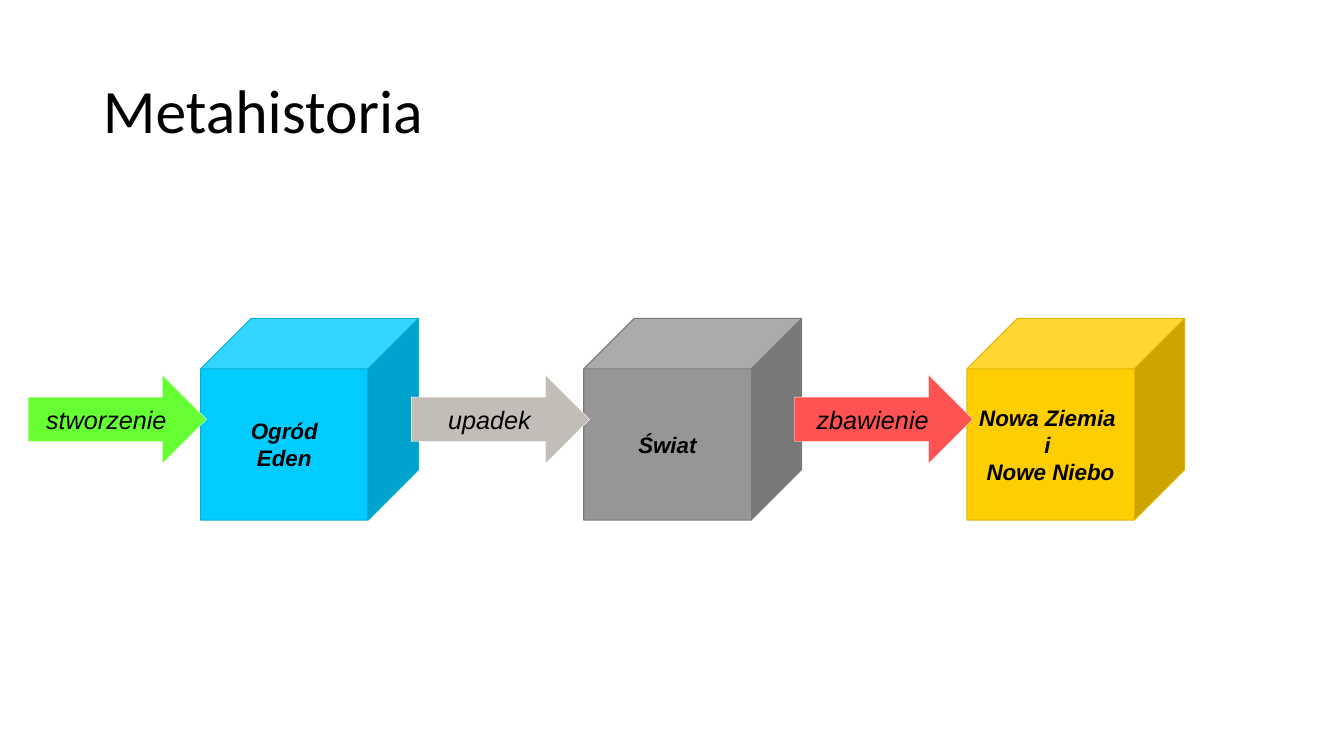
from pptx import Presentation
from pptx.dml.color import RGBColor
from pptx.enum.shapes import MSO_SHAPE
from pptx.enum.text import MSO_ANCHOR, PP_ALIGN
from pptx.util import Inches, Pt

CUBE, ARROW = MSO_SHAPE.CUBE, MSO_SHAPE.RIGHT_ARROW
MIDDLE = MSO_ANCHOR.MIDDLE
LEFT, CENTER = PP_ALIGN.LEFT, PP_ALIGN.CENTER

BLACK = RGBColor(0x00, 0x00, 0x00)
WHITE = RGBColor(0xFF, 0xFF, 0xFF)
GREEN = RGBColor(0x66, 0xFF, 0x33)
BEIGE = RGBColor(0xC2, 0xBD, 0xB6)
RED = RGBColor(0xFF, 0x53, 0x53)
BLUE = RGBColor(0x00, 0xCC, 0xFF)
BLUE_EDGE = RGBColor(0x00, 0xAE, 0xD8)
GREY = RGBColor(0x96, 0x96, 0x96)
GREY_EDGE = RGBColor(0x7A, 0x7A, 0x7A)
GOLD = RGBColor(0xFF, 0xCE, 0x00)
GOLD_EDGE = RGBColor(0xE0, 0xB4, 0x00)

# Content: each stage is an event (arrow) leading to a state (cube)
TITLE = "Metahistoria"
STAGES = [
    ("stworzenie", GREEN, "Ogród\vEden", BLUE, BLUE_EDGE),
    ("upadek", BEIGE, "Świat", GREY, GREY_EDGE),
    ("zbawienie", RED, "Nowa Ziemia \ni \nNowe Niebo", GOLD, GOLD_EDGE),
]

# Grid, in inches: one column per stage, all parts centred on one axis
FIRST_LEFT, COLUMN, AXIS = 0.28, 3.8, 4.16
ARROW_WIDTH, ARROW_HEIGHT = 1.77, 0.88
CUBE_OFFSET, CUBE_WIDTH, CUBE_HEIGHT = 1.71, 2.16, 2.0


def add_part(slide, kind, left, width, height, text, fill, edge, edge_width, size, bold):
    part = slide.shapes.add_shape(
        kind, Inches(left), Inches(AXIS - height / 2), Inches(width), Inches(height))
    part.shadow.inherit = False
    part.fill.solid()
    part.fill.fore_color.rgb = fill
    part.line.color.rgb = edge
    part.line.width = Pt(edge_width)
    frame = part.text_frame
    frame.word_wrap = False
    frame.vertical_anchor = MIDDLE
    frame.text = text
    for para in frame.paragraphs:
        para.alignment = CENTER
        font = para.font
        font.name, font.size = "Arial", Pt(size)
        font.bold, font.italic = bold, True
        font.color.rgb = BLACK


def main():
    deck = Presentation()
    deck.slide_width, deck.slide_height = Inches(13.33), Inches(7.5)
    slide = deck.slides.add_slide(deck.slide_layouts[5])

    # Title
    title = slide.shapes.title
    title.left, title.top = Inches(0.92), Inches(0.4)
    title.width, title.height = Inches(11.5), Inches(1.45)
    title.text_frame.text = TITLE
    title.text_frame.vertical_anchor = MIDDLE
    para = title.text_frame.paragraphs[0]
    para.alignment, para.line_spacing = LEFT, 0.9
    para.font.name, para.font.size = "Calibri", Pt(44)
    para.font.color.rgb = BLACK

    # Cubes first, so that the arrows lie over them
    lefts = [FIRST_LEFT + COLUMN * index for index in range(len(STAGES))]
    for left, (_, _, state, fill, edge) in zip(lefts, STAGES):
        add_part(slide, CUBE, left + CUBE_OFFSET, CUBE_WIDTH, CUBE_HEIGHT,
                 state, fill, edge, 0.75, 16, True)
    for left, (event, fill, *_) in zip(lefts, STAGES):
        add_part(slide, ARROW, left, ARROW_WIDTH, ARROW_HEIGHT,
                 event, fill, WHITE, 0.25, 18, False)

    deck.save("out.pptx")


if __name__ == "__main__":
    main()
